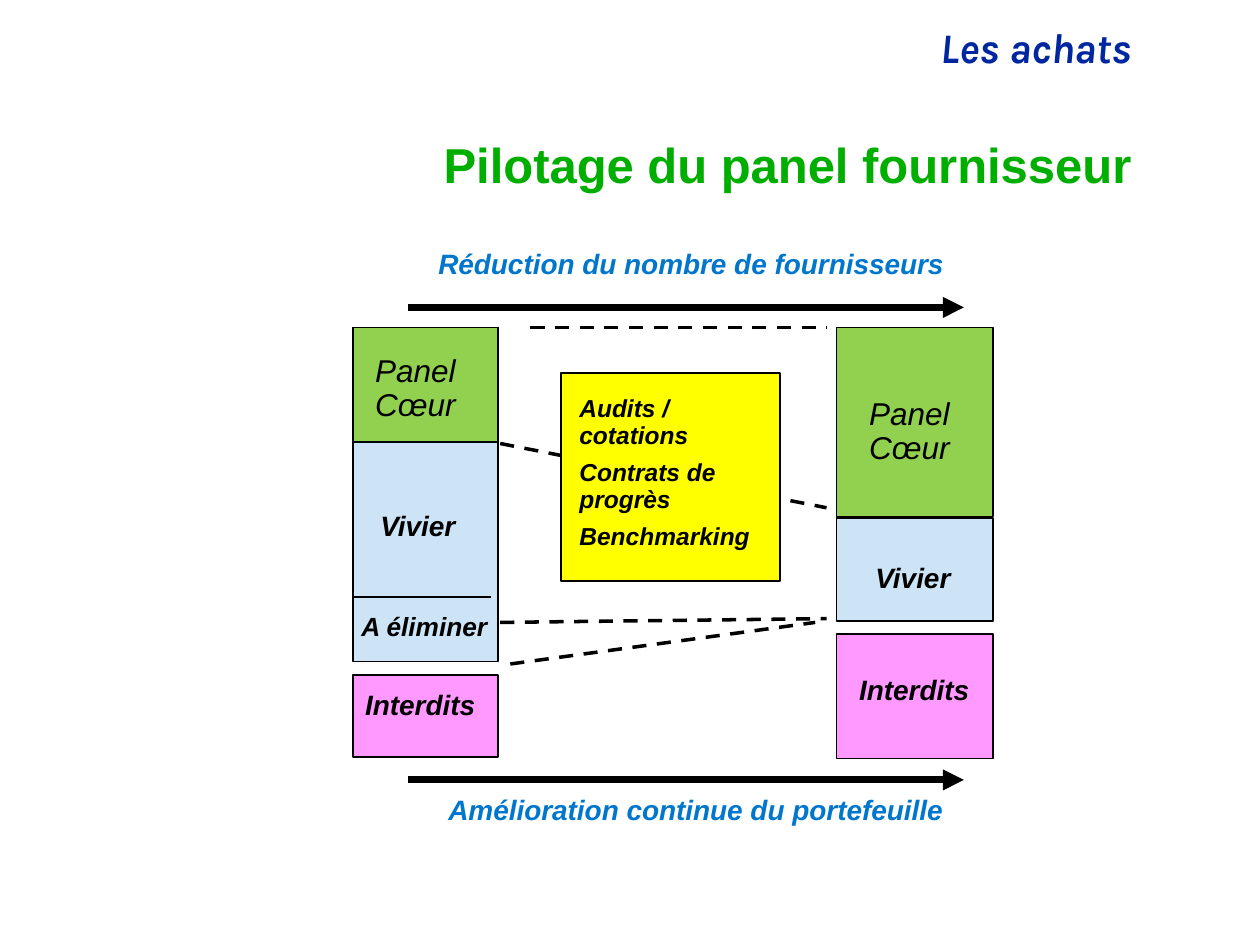
from lxml import etree
from pptx import Presentation
from pptx.dml.color import RGBColor
from pptx.enum.dml import MSO_LINE_DASH_STYLE as Dash
from pptx.enum.shapes import MSO_CONNECTOR as Connector, MSO_SHAPE as Shape
from pptx.enum.text import MSO_ANCHOR as Anchor, PP_ALIGN as Align
from pptx.oxml.ns import qn
from pptx.util import Inches, Pt

GREEN, BLUE, PINK, YELLOW = "92D050", "CCE4F5", "FF99FF", "FFFF00"
BLACK, CAPTION = "000000", "0076CC"


def color(value):
    return RGBColor.from_string(value)


def write(text_frame, paragraphs, size, fill=BLACK, bold=True, italic=True,
          font="Arial", align=Align.LEFT):
    text_frame.word_wrap = True
    text_frame.text = "\n".join(paragraphs)
    for index, paragraph in enumerate(text_frame.paragraphs):
        paragraph.alignment = align
        paragraph.line_spacing = 0.9
        paragraph.space_before = Pt(size * 0.45 if index else 0)
        for run in paragraph.runs:
            run.font.name = font
            run.font.size = Pt(size)
            run.font.bold = bold
            run.font.italic = italic
            run.font.color.rgb = color(fill)


def add_text(slide, left, top, width, height, paragraphs, size, **style):
    box = slide.shapes.add_textbox(Inches(left), Inches(top), Inches(width), Inches(height))
    write(box.text_frame, paragraphs, size, **style)


def add_block(slide, left, top, width, height, fill):
    block = slide.shapes.add_shape(Shape.RECTANGLE, Inches(left), Inches(top),
                                   Inches(width), Inches(height))
    block.shadow.inherit = False
    block.fill.solid()
    block.fill.fore_color.rgb = color(fill)
    block.line.color.rgb = color(BLACK)
    block.line.width = Pt(1)


def add_line(slide, start, end, width, dashed=False, arrow=False):
    line = slide.shapes.add_connector(Connector.STRAIGHT, *map(Inches, start + end))
    line.line.color.rgb = color(BLACK)
    line.line.width = Pt(width)
    if dashed:
        line.line.dash_style = Dash.DASH
    if arrow:
        etree.SubElement(line.line._get_or_add_ln(), qn("a:tailEnd"), type="triangle")
    etree.SubElement(line._element.spPr, qn("a:effectLst"))


def add_headings(slide, right):
    add_text(slide, right - 7.75, 0.17, 7.75, 0.46, ["Les achats"], 24,
             fill="00279F", font="Karla", align=Align.RIGHT)
    title = slide.shapes.title
    title.left, title.top = Inches(right - 7.92), Inches(1.08)
    title.width, title.height = Inches(7.92), Inches(0.5)
    title.text_frame.vertical_anchor = Anchor.MIDDLE
    write(title.text_frame, ["Pilotage du panel fournisseur"], 28,
          fill="00AE00", italic=False, align=Align.RIGHT)


def add_column(slide, left, top, width, blocks, labels):
    """Stack the supplier categories; block and label places are offsets."""
    for offset, height, fill in blocks:
        add_block(slide, left, top + offset, width, height, fill)
    for text, across, down, size in labels:
        core = text.startswith("Panel")
        add_text(slide, left + across, top + down, 1.4, 0.64 if core else 0.34,
                 [text], size, bold=not core)


def add_links(slide, left, top):
    """Dashed lines that lead from the left column to the right one."""
    for x1, y1, x2, y2 in [(0.25, 0, 2.6, 0), (0.01, 0.92, 2.6, 1.43),
                           (0.01, 2.34, 2.6, 2.31), (0.09, 2.67, 2.51, 2.34)]:
        add_line(slide, (left + x1, top + y1), (left + x2, top + y2), 2, dashed=True)


def add_trend(slide, left, arrow_top, text_left, text_top, text):
    add_line(slide, (left, arrow_top), (left + 4.41, arrow_top), 4, arrow=True)
    add_text(slide, text_left, text_top, 4.41, 0.34, [text], 16, fill=CAPTION)


def add_actions(slide, left, top, width, height):
    add_block(slide, left, top, width, height, YELLOW)
    add_text(slide, left + 0.05, top + 0.14, width - 0.14, height - 0.15,
             ["Audits / cotations", "Contrats de progrès", "Benchmarking"], 14)


def add_diagram(slide, left, top):
    column_width = 1.15
    add_column(slide, left, top, column_width,
               [(0, 2.65, BLUE), (2.76, 0.65, PINK), (0, 0.91, GREEN)],
               [("Panel\vCœur", 0.08, 0.17, 18), ("Vivier", 0.12, 1.42, 16),
                ("A éliminer", -0.03, 2.22, 15), ("Interdits", 0, 2.84, 16)])
    add_column(slide, left + 3.84, top, 1.24,
               [(0, 1.5, GREEN), (1.51, 0.82, BLUE), (2.43, 0.99, PINK)],
               [("Panel\vCœur", 0.16, 0.51, 18), ("Vivier", 0.21, 1.83, 16),
                ("Interdits", 0.08, 2.72, 16)])
    add_links(slide, left + column_width + 0.01, top)
    add_trend(slide, left + 0.44, top - 0.16, left + 0.58, top - 0.66,
              "Réduction du nombre de fournisseurs")
    add_actions(slide, left + 1.65, top + 0.36, 1.74, 1.65)
    add_trend(slide, left + 0.44, top + 3.59, left + 0.66, top + 3.67,
              "Amélioration continue du portefeuille")
    add_line(slide, (left, top + 2.14), (left + 1.1, top + 2.14), 1)


def main():
    presentation = Presentation()
    presentation.slide_width, presentation.slide_height = Inches(10), Inches(7.5)
    slide = presentation.slides.add_slide(presentation.slide_layouts[5])
    add_headings(slide, right=9.08)
    add_diagram(slide, left=2.8, top=2.6)
    presentation.save("out.pptx")


if __name__ == "__main__":
    main()
